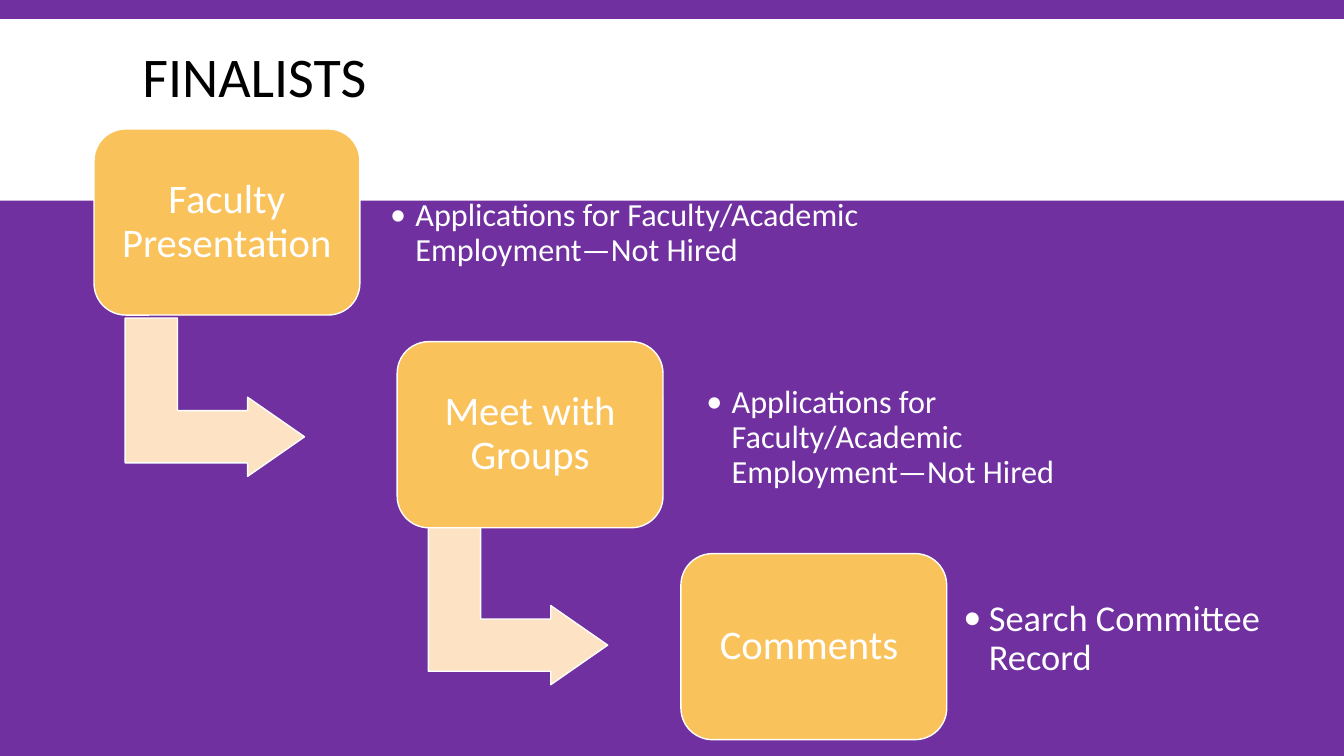
from dataclasses import dataclass
from typing import Optional

from lxml.etree import SubElement
from pptx import Presentation
from pptx.dml.color import RGBColor
from pptx.enum.shapes import MSO_SHAPE
from pptx.enum.text import MSO_ANCHOR, PP_ALIGN
from pptx.oxml.ns import qn
from pptx.shapes.autoshape import Shape
from pptx.slide import Slide
from pptx.util import Cm, Pt


@dataclass(frozen=True)
class Theme:
    font: str = "Calibri"
    purple: str = "7030A0"
    white: str = "FFFFFF"
    black: str = "000000"
    amber: str = "FAC25A"
    cream: str = "FDE3C4"
    title_size: int = 40
    step_size: int = 29
    outline: float = 1


@dataclass(frozen=True)
class Area:
    left: float
    top: float
    width: float
    height: float

    def lengths(self) -> tuple:
        return Cm(self.left), Cm(self.top), Cm(self.width), Cm(self.height)


@dataclass(frozen=True)
class Step:
    left: float
    top: float
    label: str
    note: str
    note_area: Area
    note_size: int
    note_inset: float
    arrow_top: Optional[float] = None


THEME = Theme()
SLIDE_WIDTH, SLIDE_HEIGHT = 33.87, 19.05
STEP_WIDTH, STEP_HEIGHT = 6.7, 4.69
STEP_INSET = 0.25
ARROW_WIDTH, ARROW_HEIGHT, ARROW_INDENT = 3.99, 4.52, 1.05
BULLET_INDENT = 0.64
NOT_HIRED = "Applications for Faculty/Academic Employment—Not Hired"

STEPS = [
    Step(2.37, 3.25, "Faculty Presentation", NOT_HIRED,
         Area(9.53, 4.22, 13.56, 3.35), 23, 0.3, 7.75),
    Step(10.01, 8.61, "Meet with Groups", NOT_HIRED,
         Area(17.5, 9.15, 10.39, 3.78), 23, 0.3, 13.0),
    Step(17.16, 13.95, "Comments ", "Search Committee Record",
         Area(23.92, 14.38, 8.64, 3.45), 26, 0.36),
]


def add_figure(page: Slide, kind: MSO_SHAPE, area: Area, fill: str,
               outlined: bool = True) -> Shape:
    figure = page.shapes.add_shape(kind, *area.lengths())
    figure.shadow.inherit = False
    figure.fill.solid()
    figure.fill.fore_color.rgb = RGBColor.from_string(fill)
    if outlined:
        figure.line.color.rgb = RGBColor.from_string(THEME.white)
        figure.line.width = Pt(THEME.outline)
    else:
        figure.line.fill.background()
    return figure


def write_text(box: Shape, text: str, size: int, color: str,
               align: PP_ALIGN = PP_ALIGN.LEFT, spacing: float = 0.9,
               inset: Optional[float] = None, bullet: bool = False) -> None:
    frame = box.text_frame
    frame.word_wrap = True
    frame.vertical_anchor = MSO_ANCHOR.MIDDLE
    if inset is not None:
        frame.margin_left = frame.margin_right = Cm(inset)
        frame.margin_top = frame.margin_bottom = Cm(inset)
    para = frame.paragraphs[0]
    para.alignment = align
    para.line_spacing = spacing
    if bullet:
        properties = para._p.get_or_add_pPr()
        properties.set("marL", str(Cm(BULLET_INDENT)))
        properties.set("indent", str(-Cm(BULLET_INDENT)))
        SubElement(properties, qn("a:buFont"), typeface=THEME.font)
        SubElement(properties, qn("a:buChar"), char="•")
    span = para.add_run()
    span.text = text
    span.font.name = THEME.font
    span.font.size = Pt(size)
    span.font.color.rgb = RGBColor.from_string(color)


def add_title(page: Slide) -> None:
    add_figure(page, MSO_SHAPE.RECTANGLE, Area(0, 0.48, SLIDE_WIDTH, 4.58),
               THEME.white, outlined=False)
    box = page.shapes.add_textbox(*Area(3.34, 0.79, 27.18, 2.46).lengths())
    write_text(box, "FINALISTS", THEME.title_size, THEME.black, spacing=0.85)


def add_step(page: Slide, step: Step) -> None:
    if step.arrow_top is not None:
        arrow_area = Area(step.left + ARROW_INDENT, step.arrow_top,
                          ARROW_WIDTH, ARROW_HEIGHT)
        arrow = add_figure(page, MSO_SHAPE.BENT_UP_ARROW, arrow_area, THEME.cream)
        arrow.rotation = 90
        for index, value in enumerate((0.33, 0.25, 0.36)):
            arrow.adjustments[index] = value
    box = add_figure(page, MSO_SHAPE.ROUNDED_RECTANGLE,
                     Area(step.left, step.top, STEP_WIDTH, STEP_HEIGHT), THEME.amber)
    box.adjustments[0] = 0.17
    write_text(box, step.label, THEME.step_size, THEME.white,
               align=PP_ALIGN.CENTER, inset=STEP_INSET)
    note = page.shapes.add_textbox(*step.note_area.lengths())
    write_text(note, step.note, step.note_size, THEME.white,
               inset=step.note_inset, bullet=True)


def main() -> None:
    deck = Presentation()
    deck.slide_width, deck.slide_height = Cm(SLIDE_WIDTH), Cm(SLIDE_HEIGHT)
    page = deck.slides.add_slide(deck.slide_layouts[6])
    page.background.fill.solid()
    page.background.fill.fore_color.rgb = RGBColor.from_string(THEME.purple)
    add_title(page)
    for step in STEPS:
        add_step(page, step)
    deck.save("out.pptx")


if __name__ == "__main__":
    main()
